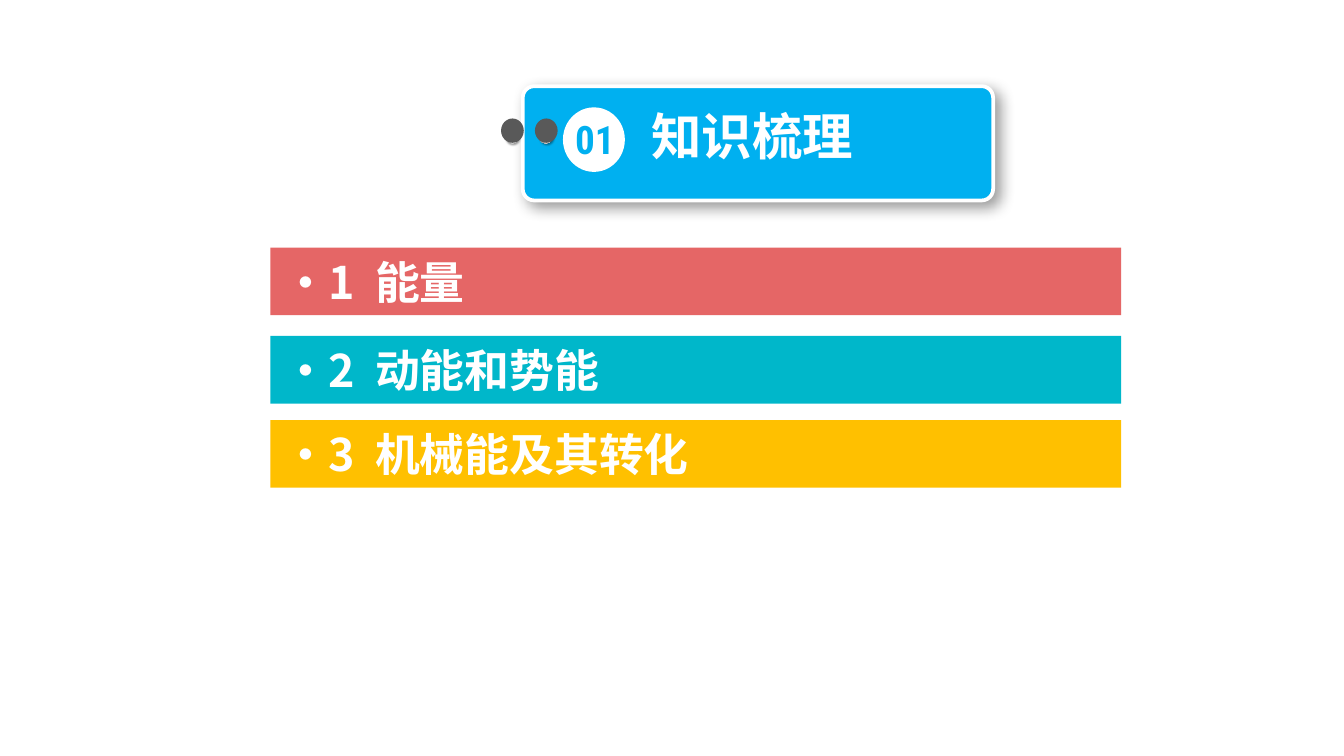
from lxml import etree
from pptx import Presentation
from pptx import util as u
from pptx.dml.color import RGBColor
from pptx.enum import shapes, text
from pptx.oxml.ns import qn


def add_shape(kind, left, top, width, height, color, shadow=None):
    shape = page.shapes.add_shape(kind, u.Cm(left), u.Cm(top), u.Cm(width), u.Cm(height))
    shape.fill.solid()
    shape.fill.fore_color.rgb = RGBColor.from_string(color)
    shape.line.fill.background()
    shape.shadow.inherit = False
    if shadow:
        blur, distance = shadow
        effects = shape._element.spPr.find(qn("a:effectLst"))
        outer = etree.SubElement(effects, qn("a:outerShdw"), blurRad=str(u.Pt(blur)),
                                 dist=str(u.Pt(distance)), dir="2700000", algn="tl", rotWithShape="0")
        black = etree.SubElement(outer, qn("a:srgbClr"), val="000000")
        etree.SubElement(black, qn("a:alpha"), val="40000")
    return shape


def style_text(box, size, font, color, align):
    frame = box.text_frame
    frame.word_wrap = True
    frame.vertical_anchor = text.MSO_ANCHOR.MIDDLE
    frame.margin_top = frame.margin_bottom = u.Cm(0.1)
    para = frame.paragraphs[0]
    para.alignment = align
    for span in para.runs:
        span.font.size = u.Pt(size)
        span.font.bold = True
        span.font.name = font
        span.font.color.rgb = RGBColor.from_string(color)
        etree.SubElement(span.font._element, qn("a:ea"), typeface=font)


SHAPE = shapes.MSO_SHAPE
ALIGN = text.PP_ALIGN
CJK = "Noto Sans CJK SC"

deck = Presentation()
deck.slide_width, deck.slide_height = u.Cm(25.4), u.Cm(14.29)
page = deck.slides.add_slide(deck.slide_layouts[6])

card = add_shape(SHAPE.ROUNDED_RECTANGLE, 9.88, 1.63, 8.89, 2.16, "00B0F0", (8, 4))
card.adjustments[0] = 0.1
card.line.color.rgb = RGBColor.from_string("FFFFFF")
card.line.width = u.Pt(2)

metal = [(0, "FFFFFF"), (17, "A6A6A6"), (35, "F2F2F2"), (55, "A6A6A6"), (75, "F2F2F2"), (100, "A6A6A6")]
for left in (10.11, 9.47):
    rim = add_shape(SHAPE.OVAL, left + 0.08, 2.46, 0.25, 0.25, "A6A6A6", (1, 1))
    rim.rotation = 270
    rim.fill.gradient()
    rim.fill.gradient_angle = 315
    stops = rim._element.spPr.find(qn("a:gradFill")).find(qn("a:gsLst"))
    for stop in list(stops):
        stops.remove(stop)
    for position, color in metal:
        stop = etree.SubElement(stops, qn("a:gs"), pos=str(position * 1000))
        etree.SubElement(stop, qn("a:srgbClr"), val=color)
    add_shape(SHAPE.OVAL, left, 2.24, 0.43, 0.46, "595959")

add_shape(SHAPE.OVAL, 10.64, 2.03, 1.17, 1.22, "FFFFFF")

labels = [
    ("01", 10.57, 2.06, 1.35, 1.14, 21, "Roboto Condensed", "00B0F0"),
    ("知识梳理", 11.4, 1.85, 5.64, 1.42, 27, CJK, "FFFFFF"),
]
for words, left, top, width, height, size, font, color in labels:
    box = page.shapes.add_textbox(u.Cm(left), u.Cm(top), u.Cm(width), u.Cm(height))
    box.text_frame.text = words
    style_text(box, size, font, color, ALIGN.CENTER)

topics = [
    (4.68, "E56666", "·1", "能量"),
    (6.35, "00B7CA", "·2", "动能和势能"),
    (7.94, "FFC000", "·3", "机械能及其转化"),
]
for top, color, number, topic in topics:
    bar = add_shape(SHAPE.RECTANGLE, 5.11, top, 16.08, 1.28, color)
    para = bar.text_frame.paragraphs[0]
    for words in (number, " ", topic):
        para.add_run().text = words
    style_text(bar, 24, CJK, "FFFFFF", ALIGN.LEFT)
    para.runs[1].font._element.set("spc", "540")

deck.save("out.pptx")
